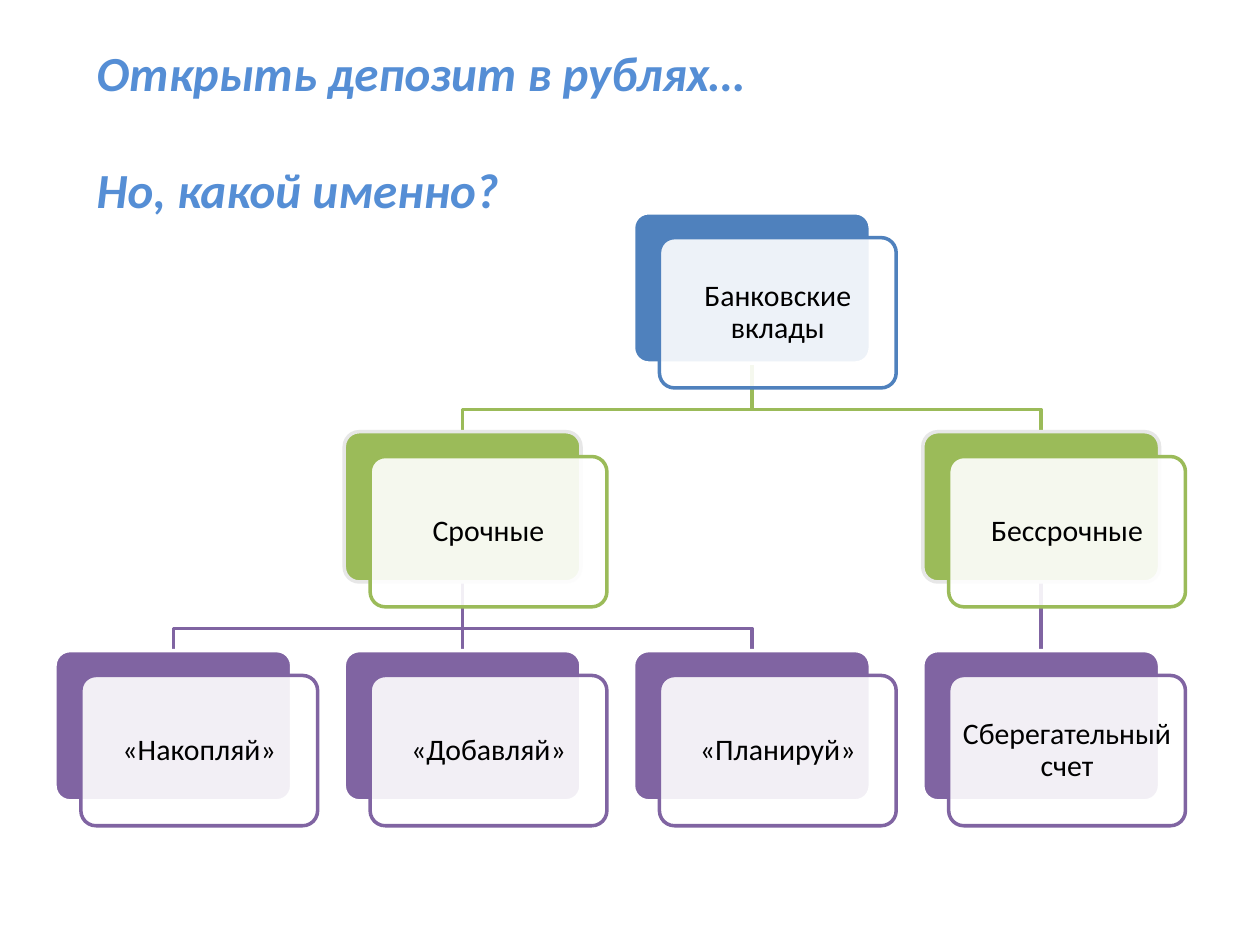
import pptx
import pptx.dml.color
import pptx.enum.shapes
import pptx.enum.text
import pptx.oxml
import pptx.util
from dataclasses import dataclass
from pptx.util import Pt


@dataclass(frozen=True)
class Theme:
    font: str = "Calibri"
    title_size: int = 28
    card_size: int = 17
    line_width: int = 2
    title: str = "558ED5"
    text: str = "000000"
    white: str = "FFFFFF"
    levels: tuple = ("4F81BD", "9BBB59", "8064A2")
    borders: tuple = ("FFFFFF", "E7E7E7", "FFFFFF")


theme = Theme()


def paint_line(line, color):
    line.color.rgb = pptx.dml.color.RGBColor.from_string(color)
    line.width = Pt(theme.line_width)


def add_card(left, top, fill, border):
    card = page.shapes.add_shape(
        pptx.enum.shapes.MSO_SHAPE.ROUNDED_RECTANGLE,
        Pt(left), Pt(top), Pt(CARD_WIDTH), Pt(CARD_HEIGHT))
    card.adjustments[0] = 0.1
    card.shadow.inherit = False
    card.fill.solid()
    card.fill.fore_color.rgb = pptx.dml.color.RGBColor.from_string(fill)
    paint_line(card.line, border)
    return card


deck = pptx.Presentation()
deck.slide_width, deck.slide_height = Pt(720), Pt(540)
page = deck.slides.add_slide(deck.slide_layouts[6])

# Title
box = page.shapes.add_textbox(Pt(48.2), Pt(20.9), Pt(617.8), Pt(131))
box.text_frame.word_wrap = True
box.text_frame.text = "Открыть депозит в рублях…\nНо, какой именно?"
box.text_frame.paragraphs[1].space_before = Pt(33)
for para in box.text_frame.paragraphs:
    font = para.runs[0].font
    font.name, font.size = theme.font, Pt(theme.title_size)
    font.bold = font.italic = True
    font.color.rgb = pptx.dml.color.RGBColor.from_string(theme.title)

# Tree grid: each node is (text, column, level, index of parent)
CARD_WIDTH, CARD_HEIGHT = 135.3, 85.9
LEFT, TOP = 31.4, 121.6
COLUMN_STEP, LEVEL_STEP = 165.3, 125.1
OFFSET_X, OFFSET_Y = 14.8, 14.2
ELBOW_DROP = 26.6
nodes = [
    ("Банковские вклады", 2, 0, None),
    ("Срочные", 1, 1, 0),
    ("«Накопляй»", 0, 2, 1),
    ("«Добавляй»", 1, 2, 1),
    ("«Планируй»", 2, 2, 1),
    ("Бессрочные", 3, 1, 0),
    ("Сберегательный счет", 3, 2, 5),
]

# Branches, behind the cards
for text, column, level, parent in reversed(nodes):
    if parent is None:
        continue
    parent_column = nodes[parent][1]
    start_x = LEFT + parent_column * COLUMN_STEP + CARD_WIDTH / 2
    end_x = LEFT + column * COLUMN_STEP + CARD_WIDTH / 2
    end_y = TOP + level * LEVEL_STEP
    start_y = end_y - LEVEL_STEP + CARD_HEIGHT
    if column == parent_column:
        branch = page.shapes.add_connector(
            pptx.enum.shapes.MSO_CONNECTOR.STRAIGHT,
            Pt(start_x), Pt(start_y), Pt(end_x), Pt(end_y))
        branch._element.spPr.append(pptx.oxml.parse_xml(
            '<a:effectLst xmlns:a="http://schemas.openxmlformats.org/drawingml/2006/main"/>'))
    else:
        elbow_y = start_y + ELBOW_DROP
        outline = page.shapes.build_freeform(Pt(start_x), Pt(start_y))
        outline.add_line_segments(
            [(Pt(start_x), Pt(elbow_y)), (Pt(end_x), Pt(elbow_y)), (Pt(end_x), Pt(end_y))],
            close=False)
        branch = outline.convert_to_shape()
        branch.shadow.inherit = False
        branch.fill.background()
    paint_line(branch.line, theme.levels[level])

# Cards: a coloured back and a translucent front with the text
for text, column, level, parent in nodes:
    left, top = LEFT + column * COLUMN_STEP, TOP + level * LEVEL_STEP
    color = theme.levels[level]
    add_card(left, top, color, theme.borders[level])
    front = add_card(left + OFFSET_X, top + OFFSET_Y, theme.white, color)
    front_color = front._element.spPr.find(".//" + pptx.oxml.ns.qn("a:srgbClr"))
    front_color.append(pptx.oxml.parse_xml(
        '<a:alpha xmlns:a="http://schemas.openxmlformats.org/drawingml/2006/main" val="90000"/>'))
    frame = front.text_frame
    frame.word_wrap = True
    frame.margin_left = frame.margin_right = Pt(5)
    frame.margin_top = frame.margin_bottom = Pt(5)
    frame.vertical_anchor = pptx.enum.text.MSO_ANCHOR.MIDDLE
    frame.text = text
    para = frame.paragraphs[0]
    para.alignment = pptx.enum.text.PP_ALIGN.CENTER
    para.line_spacing = 0.9
    font = para.runs[0].font
    font.name, font.size = theme.font, Pt(theme.card_size)
    font.color.rgb = pptx.dml.color.RGBColor.from_string(theme.text)

deck.save("out.pptx")
